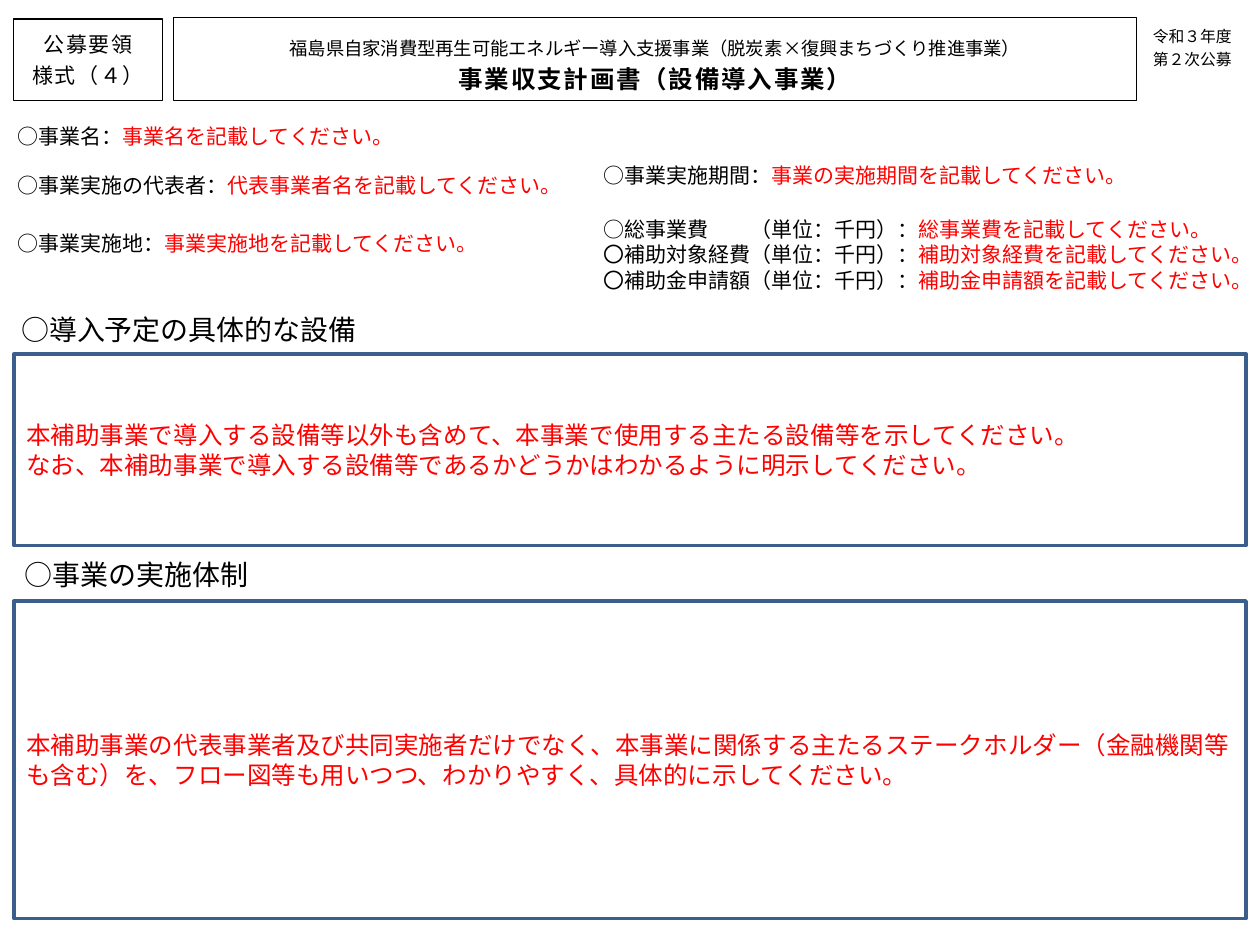
from lxml import etree
from pptx import Presentation
from pptx.dml.color import RGBColor
from pptx.enum.shapes import MSO_SHAPE
from pptx.enum.text import MSO_ANCHOR, PP_ALIGN
from pptx.oxml.ns import qn
from pptx.util import Inches, Pt

FONT = "Noto Sans CJK JP"
BLACK = RGBColor(0x00, 0x00, 0x00)
RED = RGBColor(0xFF, 0x00, 0x00)
BLUE = RGBColor(0x3A, 0x5F, 0x8C)
RECTANGLE = MSO_SHAPE.RECTANGLE
TOP, MIDDLE = MSO_ANCHOR.TOP, MSO_ANCHOR.MIDDLE
LEFT, CENTER = PP_ALIGN.LEFT, PP_ALIGN.CENTER

MARGIN = 0.11
FRAME_WIDTH = 9.78
COLUMN_LEFT, COLUMN_RIGHT = 0.04, 4.69
COST_TAB = 1.17


def add_span(para, text, size=12, color=BLACK, bold=False, spacing=0):
    span = para.add_run()
    span.text = text
    span.font.name = FONT
    span.font.size = Pt(size)
    span.font.color.rgb = color
    span.font.bold = bold
    properties = span.font._element
    if spacing:
        properties.set("spc", str(spacing * 100))
    etree.SubElement(properties, qn("a:ea"), typeface=FONT)


def add_tab_stop(para, position):
    stops = etree.SubElement(para._p.get_or_add_pPr(), qn("a:tabLst"))
    etree.SubElement(stops, qn("a:tab"), pos=str(Inches(position)), algn="l")


class FormSlide:
    def __init__(self, deck):
        self.page = deck.slides.add_slide(deck.slide_layouts[6])

    def fill_text(self, frame, lines, align=LEFT, leading=None):
        for index, spans in enumerate(lines):
            para = frame.add_paragraph() if index else frame.paragraphs[0]
            para.alignment = align
            if leading:
                para.line_spacing = Pt(leading)
            for text, style in spans:
                add_span(para, text, **style)

    def text(self, left, top, width, height, lines):
        box = self.page.shapes.add_textbox(
            Inches(left), Inches(top), Inches(width), Inches(height))
        box.text_frame.word_wrap = True
        self.fill_text(box.text_frame, lines)
        return box

    def field(self, left, top, width, height, entries):
        lines = [[(label, {}), (hint, {"color": RED})] for label, hint in entries]
        return self.text(left, top, width, height, lines)

    def heading(self, left, top, width, height, text):
        self.text(left, top, width, height, [[(text, {"size": 16})]])

    def frame(self, left, top, width, height, lines, line=BLACK, weight=0.75,
              anchor=TOP, align=CENTER, leading=None):
        box = self.page.shapes.add_shape(
            RECTANGLE, Inches(left), Inches(top), Inches(width), Inches(height))
        box.shadow.inherit = False
        box.fill.background()
        box.line.color.rgb = line
        box.line.width = Pt(weight)
        box.text_frame.word_wrap = True
        box.text_frame.vertical_anchor = anchor
        self.fill_text(box.text_frame, lines, align, leading)

    def answer(self, top, height, texts):
        lines = [[(text, {"size": 14, "color": RED})] for text in texts]
        self.frame(MARGIN, top, FRAME_WIDTH, height, lines,
                   line=BLUE, weight=2, anchor=MIDDLE, align=LEFT)

    def table(self, left, top, width, height, texts):
        table = self.page.shapes.add_table(
            1, 1, Inches(left), Inches(top), Inches(width), Inches(height)).table
        table.first_row = table.horz_banding = False
        cell = table.cell(0, 0)
        cell.fill.background()
        properties = cell._tc.get_or_add_tcPr()
        for index, side in enumerate(("lnL", "lnR", "lnT", "lnB")):
            border = etree.Element(qn(f"a:{side}"), w="0")
            etree.SubElement(border, qn("a:noFill"))
            properties.insert(index, border)
        self.fill_text(cell.text_frame, [[(text, {"size": 9})] for text in texts])


def main():
    deck = Presentation()
    deck.slide_width, deck.slide_height = Inches(10), Inches(7.5)
    form = FormSlide(deck)

    label = {"spacing": 1}
    form.frame(MARGIN, 0.15, 1.18, 0.65,
               [[("公募要領", label)], [("様式（４）", label)]], leading=18)
    form.frame(1.38, 0.14, 7.64, 0.66, [
        [("福島県自家消費型再生可能エネルギー導入支援事業（脱炭素×復興まちづくり推進事業）",
          {"size": 10.5})],
        [("事業収支計画書（設備導入事業）", {"size": 14, "bold": True, "spacing": 1})],
    ], leading=20)
    form.table(9.05, 0.14, 0.94, 0.4, ["令和３年度", "第２次公募"])

    for left, top, width, name, hint in (
        (COLUMN_LEFT, 0.93, 4.17, "○事業名：", "事業名を記載してください。"),
        (COLUMN_LEFT, 1.32, 4.49, "○事業実施の代表者：", "代表事業者名を記載してください。"),
        (COLUMN_LEFT, 1.78, 4.09, "○事業実施地：", "事業実施地を記載してください。"),
        (COLUMN_RIGHT, 1.24, 4.57, "○事業実施期間：", "事業の実施期間を記載してください。"),
    ):
        form.field(left, top, width, 0.3, [(name, hint)])
    costs = form.field(COLUMN_RIGHT, 1.67, 5.35, 0.71, [
        ("○総事業費\t（単位：千円）：", "総事業費を記載してください。"),
        ("〇補助対象経費（単位：千円）：", "補助対象経費を記載してください。"),
        ("〇補助金申請額（単位：千円）：", "補助金申請額を記載してください。"),
    ])
    add_tab_stop(costs.text_frame.paragraphs[0], COST_TAB)

    form.heading(0.07, 2.43, 3.62, 0.37, "○導入予定の具体的な設備")
    form.answer(2.81, 1.52, [
        "本補助事業で導入する設備等以外も含めて、本事業で使用する主たる設備等を示してください。",
        "なお、本補助事業で導入する設備等であるかどうかはわかるように明示してください。",
    ])
    form.heading(0.1, 4.38, 3.86, 0.47, "○事業の実施体制")
    form.answer(4.77, 2.52, [
        "本補助事業の代表事業者及び共同実施者だけでなく、本事業に関係する主たるステークホルダー"
        "（金融機関等も含む）を、フロー図等も用いつつ、わかりやすく、具体的に示してください。",
    ])
    deck.save("out.pptx")


if __name__ == "__main__":
    main()
